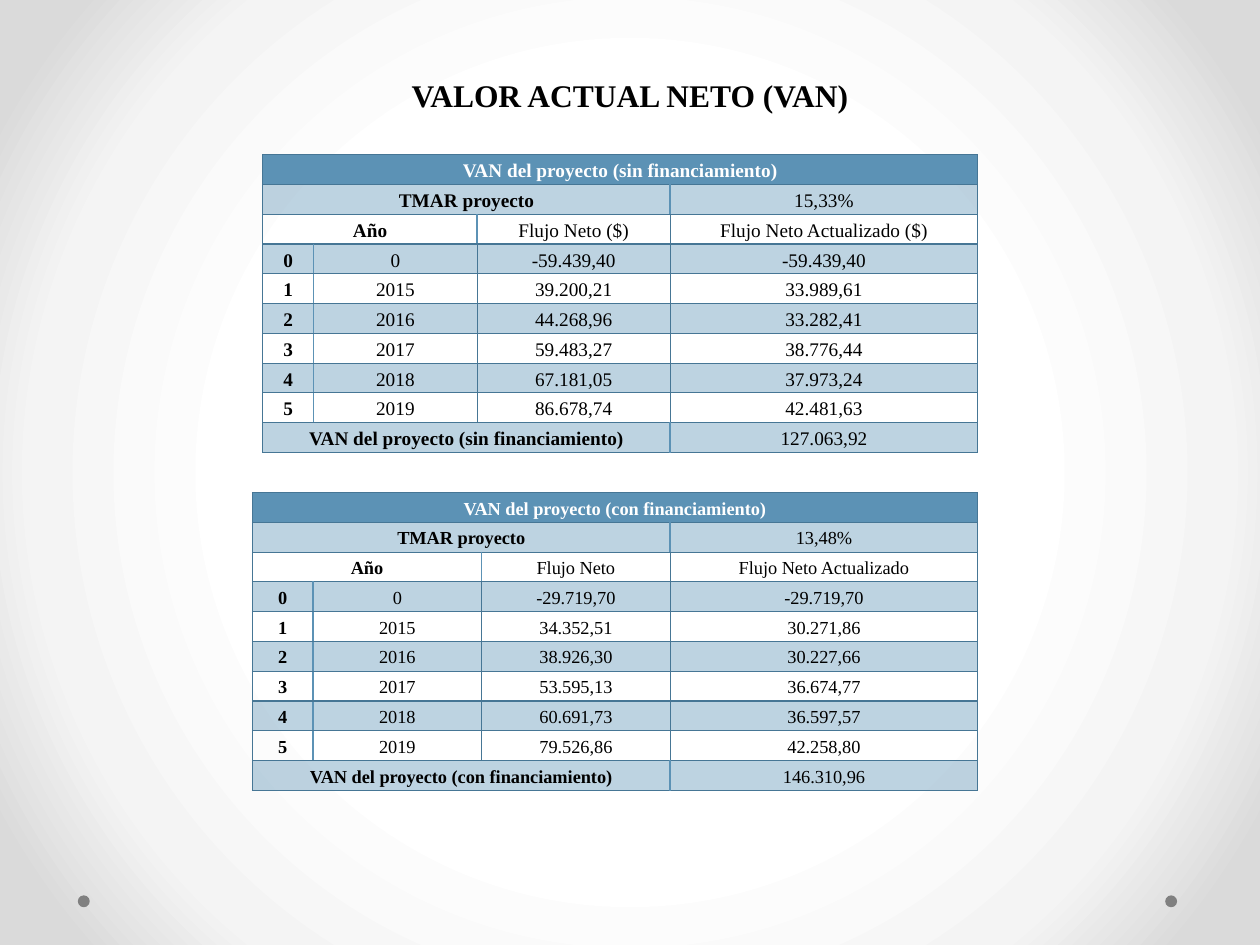
from lxml import etree
from pptx import Presentation
from pptx.dml.color import RGBColor
from pptx.enum.shapes import MSO_SHAPE
from pptx.enum.text import MSO_ANCHOR, PP_ALIGN
from pptx.oxml import parse_xml
from pptx.oxml.ns import nsdecls, qn
from pptx.util import Cm, Pt

CENTER = PP_ALIGN.CENTER
MIDDLE = MSO_ANCHOR.MIDDLE
BOTTOM = MSO_ANCHOR.BOTTOM
OVAL = MSO_SHAPE.OVAL
TITLE_ONLY = 5
COLORS = {
    "text": "000000", "white": "FFFFFF", "header": "5C92B5",
    "border": "467695", "dot": "808080",
    "mist": "F4F4F4", "edge": "DADADA",
}


class SlideBuilder:
    """Holds the style and the current slide."""

    font_name = "Times New Roman"
    row_height = 0.6
    band_opacity = 40

    def __init__(self, presentation):
        """Add a slide that has only a title."""
        self.slide = presentation.slides.add_slide(presentation.slide_layouts[TITLE_ONLY])

    def background(self, stops):
        """Fill the background with a round gradient from the centre."""
        self.slide.background.fill.gradient()
        gradient = self.slide.element.find(".//" + qn("a:gradFill"))
        stop_xml = "".join(
            f'<a:gs pos="{percent * 1000}"><a:srgbClr val="{COLORS[color]}"/></a:gs>'
            for percent, color in stops)
        gradient.getparent().replace(gradient, parse_xml(
            f'<a:gradFill rotWithShape="1" {nsdecls("a")}><a:gsLst>{stop_xml}</a:gsLst>'
            '<a:path path="circle"><a:fillToRect l="50000" t="50000" r="50000" b="50000"/>'
            '</a:path></a:gradFill>'))

    def set_text(self, frame, text, size, color="text", bold=False, spacing=1.0):
        """Put one centred paragraph into a text frame."""
        frame.text = text
        paragraph = frame.paragraphs[0]
        paragraph.alignment = CENTER
        paragraph.line_spacing = spacing
        paragraph.font.name = self.font_name
        paragraph.font.size = Pt(size)
        paragraph.font.bold = bold
        paragraph.font.color.rgb = RGBColor.from_string(COLORS[color])

    def title(self, text):
        """Place and format the title placeholder."""
        shape = self.slide.shapes.title
        shape.left, shape.top, shape.width, shape.height = Cm(1.27), Cm(0), Cm(22.86), Cm(4.45)
        shape.text_frame.vertical_anchor = BOTTOM
        shape.text_frame.margin_bottom = Cm(2.15)
        self.set_text(shape.text_frame, text, 18, bold=True)

    def dot(self, left, top, size=0.24):
        """Draw a small round ornament."""
        shape = self.slide.shapes.add_shape(OVAL, Cm(left), Cm(top), Cm(size), Cm(size))
        shape.shadow.inherit = False
        shape.fill.solid()
        shape.fill.fore_color.rgb = RGBColor.from_string(COLORS["dot"])
        shape.line.fill.background()

    def borders(self, cell, divider):
        """Frame a cell; a divider is a lighter, thicker right edge."""
        properties = cell._tc.get_or_add_tcPr()
        for side in "LRTB":
            light = divider and side == "R"
            width, color = (1, "header") if light else (0.75, "border")
            properties.append(parse_xml(
                f'<a:ln{side} w="{Pt(width)}" {nsdecls("a")}><a:solidFill>'
                f'<a:srgbClr val="{COLORS[color]}"/></a:solidFill></a:ln{side}>'))

    def fill_cell(self, cell, row):
        """Give the header a solid fill and every second row a tint."""
        if row and row % 2 == 0:
            cell.fill.background()
            return
        cell.fill.solid()
        cell.fill.fore_color.rgb = RGBColor.from_string(COLORS["header"])
        if row:
            color = cell._tc.tcPr.find(qn("a:solidFill")).find(qn("a:srgbClr"))
            etree.SubElement(color, qn("a:alpha")).set("val", str(self.band_opacity * 1000))

    def table(self, left, top, widths, rows, size):
        """Add a table; None in a row extends the cell to its left."""
        shape = self.slide.shapes.add_table(
            len(rows), len(widths), Cm(left), Cm(top),
            Cm(sum(widths)), Cm(self.row_height * len(rows)))
        table = shape.table
        table.first_row = table.horz_banding = False
        for column, width in zip(table.columns, widths):
            column.width = Cm(width)
        for row, texts in enumerate(rows):
            table.rows[row].height = Cm(self.row_height)
            span = 1 + texts.count(None)
            for column, text in enumerate(texts):
                cell = table.cell(row, column)
                cell.margin_left = cell.margin_right = Cm(0.18)
                cell.margin_top = cell.margin_bottom = Cm(0)
                cell.vertical_anchor = MIDDLE
                self.borders(cell, divider=row > 0 and column == 0)
                self.fill_cell(cell, row)
                if text is not None:
                    self.set_text(cell.text_frame, text, size, "text" if row else "white",
                                  bold=column == 0, spacing=1.15)
            if span > 1:
                table.cell(row, 0).merge(table.cell(row, span - 1))


def van_rows(name, rate, headings, flows, total):
    """Lay out the rows of one net present value table."""
    years = ["0"] + [str(year) for year in range(2015, 2020)]
    tinted_years = zip(years, flows)
    return [
        [name, None, None, None],
        ["TMAR proyecto", None, None, rate],
        ["Año", None, *headings],
        *[[str(period), year, *flow] for period, (year, flow) in enumerate(tinted_years)],
        [name, None, None, total],
    ]


WITHOUT_LOAN = [
    ("-59.439,40", "-59.439,40"), ("39.200,21", "33.989,61"), ("44.268,96", "33.282,41"),
    ("59.483,27", "38.776,44"), ("67.181,05", "37.973,24"), ("86.678,74", "42.481,63"),
]
WITH_LOAN = [
    ("-29.719,70", "-29.719,70"), ("34.352,51", "30.271,86"), ("38.926,30", "30.227,66"),
    ("53.595,13", "36.674,77"), ("60.691,73", "36.597,57"), ("79.526,86", "42.258,80"),
]

presentation = Presentation()
presentation.slide_width, presentation.slide_height = Cm(25.4), Cm(19.05)
builder = SlideBuilder(presentation)
builder.background([(50, "white"), (76, "mist"), (92, "edge")])
for dot_left in (23.49, 1.57):
    builder.dot(dot_left, 18.05)
builder.title("VALOR ACTUAL NETO (VAN)")
builder.table(5.3, 3.12, [1.02, 3.3, 3.89, 6.2], van_rows(
    "VAN del proyecto (sin financiamiento)", "15,33%",
    ["Flujo Neto ($)", "Flujo Neto Actualizado ($)"], WITHOUT_LOAN, "127.063,92"), 11)
builder.table(5.09, 9.93, [1.22, 3.4, 3.8, 6.2], van_rows(
    "VAN del proyecto (con financiamiento)", "13,48%",
    ["Flujo Neto", "Flujo Neto Actualizado"], WITH_LOAN, "146.310,96"), 10.5)
presentation.save("out.pptx")
